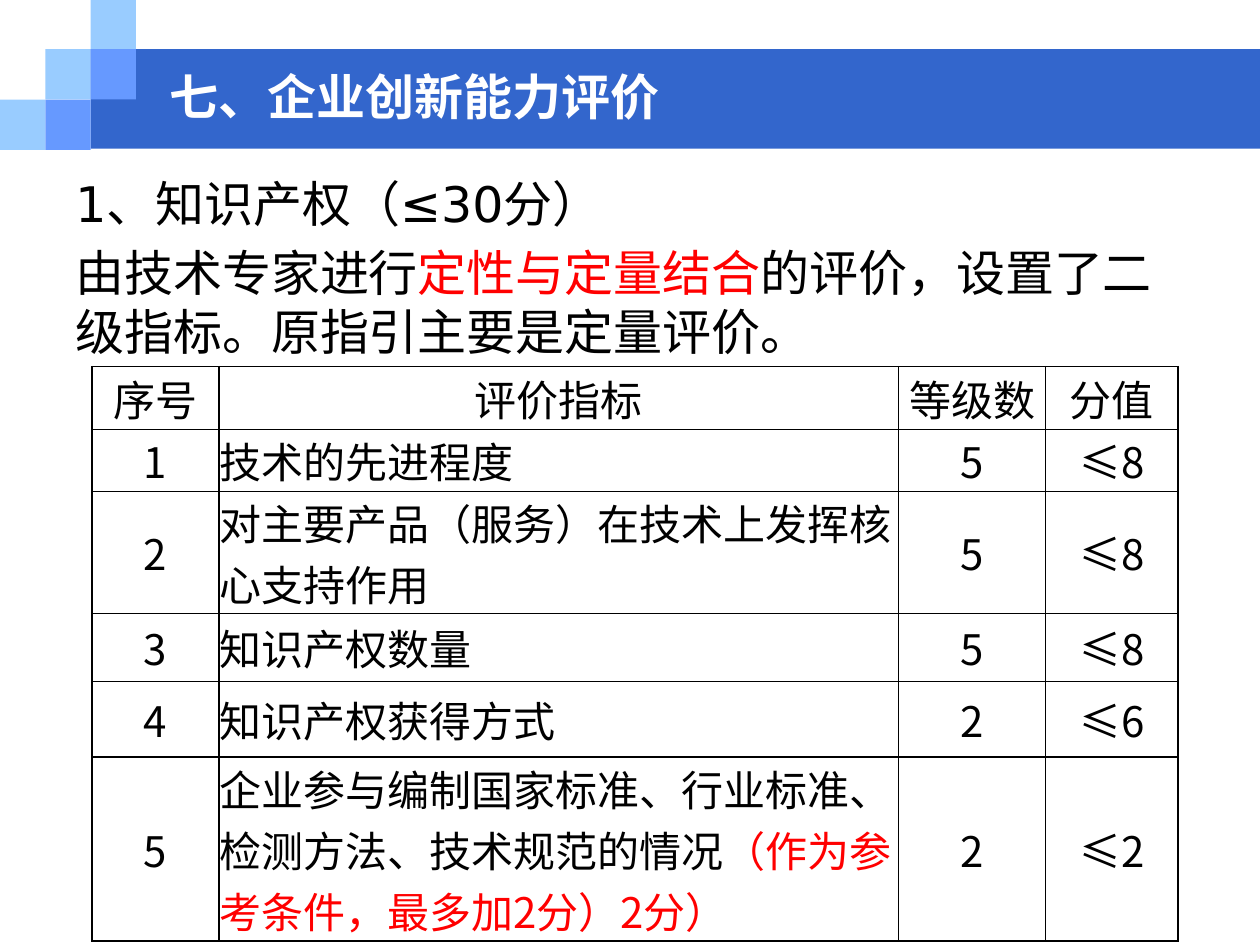
from dataclasses import dataclass

from lxml import etree
from pptx import Presentation
from pptx.dml.color import RGBColor
from pptx.enum.shapes import MSO_SHAPE
from pptx.enum.text import MSO_ANCHOR, PP_ALIGN
from pptx.oxml.ns import qn
from pptx.util import Inches, Pt

RECTANGLE = MSO_SHAPE.RECTANGLE
MIDDLE, TOP = MSO_ANCHOR.MIDDLE, MSO_ANCHOR.TOP
LEFT, CENTER = PP_ALIGN.LEFT, PP_ALIGN.CENTER

BLUE = RGBColor(0x33, 0x66, 0xCC)
SKY = RGBColor(0x99, 0xCC, 0xFF)
PERIWINKLE = RGBColor(0x66, 0x99, 0xFF)
WHITE = RGBColor(0xFF, 0xFF, 0xFF)
BLACK = RGBColor(0x00, 0x00, 0x00)
RED = RGBColor(0xFF, 0x00, 0x00)

TITLE_FORMAT = {"name": "Arial", "size": Pt(28), "bold": True}
BODY_FORMAT = {"name": "DejaVu Sans", "size": Pt(28)}
TABLE_FORMAT = {"name": "Noto Sans CJK SC", "size": Pt(24)}


@dataclass(frozen=True)
class Block:
    left: float
    top: float
    width: float
    height: float
    color: RGBColor


@dataclass(frozen=True)
class Span:
    text: str
    color: RGBColor = BLACK


@dataclass(frozen=True)
class Indicator:
    number: str
    spans: tuple[Span, ...]
    levels: str
    score: str


SQUARE_WIDTH, SQUARE_HEIGHT = 0.36, 0.4
SQUARE_TOPS = (0, 0.39, 0.79)
SQUARES = [(0, 2, SKY), (1, 1, SKY), (2, 0, SKY), (2, 1, PERIWINKLE), (1, 2, PERIWINKLE)]
BLOCKS = [Block(0.72, 0.39, 9.28, 0.79, BLUE)] + [
    Block(column * SQUARE_WIDTH, SQUARE_TOPS[row], SQUARE_WIDTH, SQUARE_HEIGHT, color)
    for column, row, color in SQUARES
]

TITLE = [(Span("七、企业创新能力评价", WHITE),)]
BODY = [
    (Span("1、知识产权（≤30分）"),),
    (
        Span("由技术专家进行"),
        Span("定性与定量结合", RED),
        Span("的评价，设置了二级指标。原指引主要是定量评价。"),
    ),
]
COLUMN_WIDTHS = (1.01, 5.39, 1.17, 1.05)
ROW_HEIGHTS = (0.5, 0.49, 0.97, 0.54, 0.6, 1.46)
INDICATORS = [
    Indicator("序号", (Span("评价指标"),), "等级数", "分值"),
    Indicator("1", (Span("技术的先进程度"),), "5", "≤8"),
    Indicator("2", (Span("对主要产品（服务）在技术上发挥核心支持作用"),), "5", "≤8"),
    Indicator("3", (Span("知识产权数量"),), "5", "≤8"),
    Indicator("4", (Span("知识产权获得方式"),), "2", "≤6"),
    Indicator(
        "5",
        (
            Span("企业参与编制国家标准、行业标准、检测方法、技术规范的情况"),
            Span("（作为参考条件，最多加2分）2分）", RED),
        ),
        "2",
        "≤2",
    ),
]


def draw_block(page, block: Block) -> None:
    shape = page.shapes.add_shape(
        RECTANGLE, Inches(block.left), Inches(block.top), Inches(block.width), Inches(block.height)
    )
    shape.shadow.inherit = False
    shape.fill.solid()
    shape.fill.fore_color.rgb = block.color
    shape.line.fill.background()


def write_spans(para, spans: tuple[Span, ...], text_format: dict) -> None:
    for span in spans:
        run = para.add_run()
        run.text = span.text
        for name, value in text_format.items():
            setattr(run.font, name, value)
        run.font.color.rgb = span.color
        east_asian = etree.SubElement(run.font._element, qn("a:ea"))
        east_asian.set("typeface", text_format["name"])


def draw_text(page, place: tuple, paragraphs: list, text_format: dict, anchor, gap: float) -> None:
    box = page.shapes.add_textbox(*(Inches(length) for length in place))
    frame = box.text_frame
    frame.word_wrap = True
    frame.vertical_anchor = anchor
    for index, spans in enumerate(paragraphs):
        para = frame.add_paragraph() if index else frame.paragraphs[0]
        para.space_before = Pt(gap)
        write_spans(para, spans, text_format)


def add_borders(cell) -> None:
    properties = cell._tc.get_or_add_tcPr()
    for index, side in enumerate(("a:lnL", "a:lnR", "a:lnT", "a:lnB")):
        line = etree.Element(qn(side), w=str(Pt(1)))
        fill = etree.SubElement(line, qn("a:solidFill"))
        etree.SubElement(fill, qn("a:srgbClr"), val=str(BLACK))
        properties.insert(index, line)


def fill_cell(cell, spans: tuple[Span, ...], alignment) -> None:
    for side in ("left", "right", "top", "bottom"):
        setattr(cell, f"margin_{side}", 0)
    cell.vertical_anchor = MIDDLE
    cell.fill.background()
    para = cell.text_frame.paragraphs[0]
    para.alignment = alignment
    write_spans(para, spans, TABLE_FORMAT)
    add_borders(cell)


def draw_table(page, left: float, top: float) -> None:
    table = page.shapes.add_table(
        len(ROW_HEIGHTS), len(COLUMN_WIDTHS), Inches(left), Inches(top),
        Inches(sum(COLUMN_WIDTHS)), Inches(sum(ROW_HEIGHTS)),
    ).table
    table.first_row = False
    table.horz_banding = False
    for column, width in zip(table.columns, COLUMN_WIDTHS):
        column.width = Inches(width)
    for row_index, (row, height, indicator) in enumerate(zip(table.rows, ROW_HEIGHTS, INDICATORS)):
        row.height = Inches(height)
        contents = (
            (Span(indicator.number),), indicator.spans,
            (Span(indicator.levels),), (Span(indicator.score),),
        )
        for column_index, spans in enumerate(contents):
            alignment = LEFT if row_index and column_index == 1 else CENTER
            fill_cell(table.cell(row_index, column_index), spans, alignment)


def main() -> None:
    deck = Presentation()
    deck.slide_width, deck.slide_height = Inches(10), Inches(7.5)
    page = deck.slides.add_slide(deck.slide_layouts[6])
    for block in BLOCKS:
        draw_block(page, block)
    draw_text(page, (1.25, 0.5, 8.08, 0.53), TITLE, TITLE_FORMAT, MIDDLE, 0)
    draw_text(page, (0.5, 1.33, 9.12, 2.77), BODY, BODY_FORMAT, TOP, 5.6)
    draw_table(page, 0.73, 2.91)
    deck.save("out.pptx")


if __name__ == "__main__":
    main()
